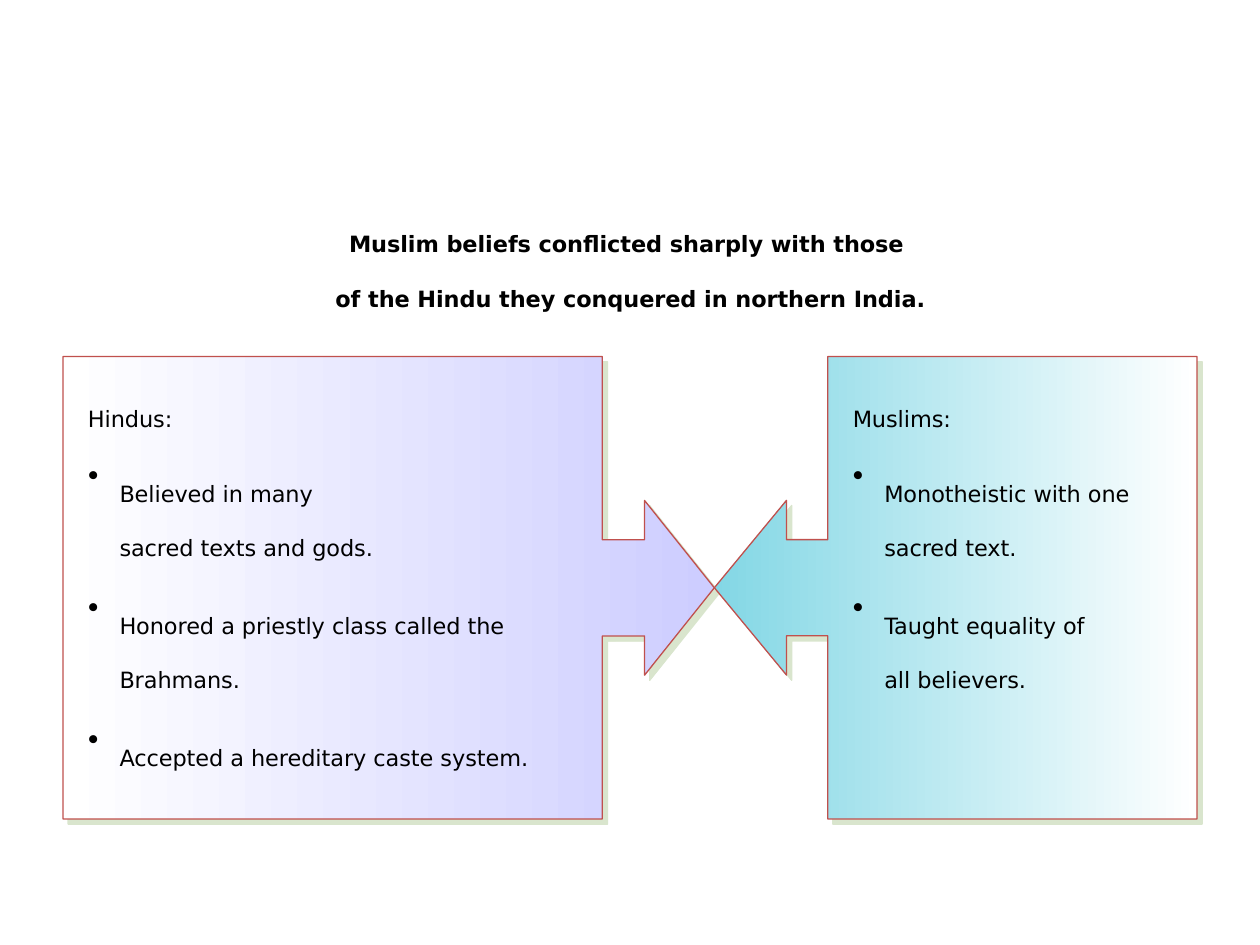
from dataclasses import dataclass

from lxml import etree
from pptx import Presentation
from pptx.dml.color import RGBColor
from pptx.enum.shapes import MSO_SHAPE
from pptx.enum.text import MSO_AUTO_SIZE as AutoSize, PP_ALIGN as Align
from pptx.oxml.ns import qn
from pptx.util import Inches, Pt


@dataclass(frozen=True)
class Theme:
    font: str = "DejaVu Sans"
    size: float = 22
    baseline: int = -30000
    item_gap: float = 13.2
    ink: str = "000000"
    paper: str = "FFFFFF"
    hindu: str = "CDCDFF"
    muslim: str = "83D7E5"
    outline: str = "C0504D"
    shadow: str = "ADC793"


@dataclass(frozen=True)
class Box:
    left: float
    top: float
    width: float
    height: float

    def inches(self):
        return [Inches(v) for v in (self.left, self.top, self.width, self.height)]

    def inner(self, left, top, width, height):
        return Box(self.left + left, self.top + top, width, height)


THEME = Theme()


def add_node(parent, tag, **attributes):
    values = {name: str(value) for name, value in attributes.items()}
    return etree.SubElement(parent, qn(tag), values)


def add_bullet(para):
    properties = para._p.get_or_add_pPr()
    properties.set("marL", str(Inches(0.25)))
    properties.set("indent", str(Inches(-0.25)))
    color = add_node(properties, "a:buClr")
    add_node(color, "a:srgbClr", val=THEME.ink)
    add_node(properties, "a:buSzPct", val=80000)
    add_node(properties, "a:buChar", char="•")


def add_text(page, box, lines, bold=False, align=Align.LEFT, bulleted=False):
    frame = page.shapes.add_textbox(*box.inches()).text_frame
    frame.word_wrap = True
    frame.auto_size = AutoSize.SHAPE_TO_FIT_TEXT
    frame.text = "\n".join(lines)
    font_format = {"name": THEME.font, "size": Pt(THEME.size), "bold": bold}
    for para in frame.paragraphs:
        para.alignment = align
        if bulleted:
            para.space_after = Pt(THEME.item_gap)
            add_bullet(para)
        for span in para.runs:
            for name, value in font_format.items():
                setattr(span.font, name, value)
            span.font.color.rgb = RGBColor.from_string(THEME.ink)
            span._r.get_or_add_rPr().set("baseline", str(THEME.baseline))


def add_shadow(shape):
    shape.shadow.inherit = False
    effects = shape._element.spPr.find(qn("a:effectLst"))
    shadow = add_node(effects, "a:outerShdw", blurRad=0, dist=Pt(4.2),
                      dir=45 * 60000, algn="ctr", rotWithShape=0)
    color = add_node(shadow, "a:srgbClr", val=THEME.shadow)
    add_node(color, "a:alpha", val=46000)


def add_callout(page, box, color, rotation, adjustments):
    upright = box.inner((box.width - box.height) / 2, (box.height - box.width) / 2,
                        box.height, box.width)
    callout = page.shapes.add_shape(MSO_SHAPE.UP_ARROW_CALLOUT, *upright.inches())
    callout.rotation = rotation
    callout._element.spPr.xfrm.set("flipH", "1")
    for index, value in enumerate(adjustments):
        callout.adjustments[index] = value
    callout.fill.gradient()
    callout.fill.gradient_angle = 270
    for stop, shade, position in zip(callout.fill.gradient_stops, (color, THEME.paper), (0, 1)):
        stop.color.rgb = RGBColor.from_string(shade)
        stop.position = position
    callout.line.color.rgb = RGBColor.from_string(THEME.outline)
    callout.line.width = Pt(0.75)
    add_shadow(callout)


def add_belief_panel(page, box, heading, beliefs, color, rotation, adjustments,
                     text_left, list_width, list_height):
    add_callout(page, box, color, rotation, adjustments)
    add_text(page, box.inner(text_left, 0.71, list_width, list_height), beliefs, bulleted=True)
    add_text(page, box.inner(text_left, 0.12, 1.67, 0.47), [heading])


def add_statement(page, box):
    add_text(page, box, ["Muslim beliefs conflicted sharply with those \v"
                         "of the Hindu they conquered in northern India."],
             bold=True, align=Align.CENTER)


def main():
    deck = Presentation()
    deck.slide_width, deck.slide_height = Inches(10), Inches(7.5)
    page = deck.slides.add_slide(deck.slide_layouts[6])
    add_statement(page, Box(0.5, 1.56, 9, 0.84))
    add_belief_panel(
        page, Box(0.5, 2.83, 5.17, 3.67), "Hindus:",
        ["Believed in many \vsacred texts and gods.",
         "Honored a priestly class called the Brahmans.",
         "Accepted a hereditary caste system."],
        THEME.hindu, 90, (0.208, 0.189, 0.151, 0.828),
        text_left=0.1, list_width=4.25, list_height=3)
    add_belief_panel(
        page, Box(5.67, 2.83, 3.83, 3.67), "Muslims:",
        ["Monotheistic with one sacred text.",
         "Taught equality of \vall believers."],
        THEME.muslim, 270, (0.208, 0.189, 0.156, 0.765),
        text_left=1, list_width=2.83, list_height=2.77)
    deck.save("out.pptx")


if __name__ == "__main__":
    main()
